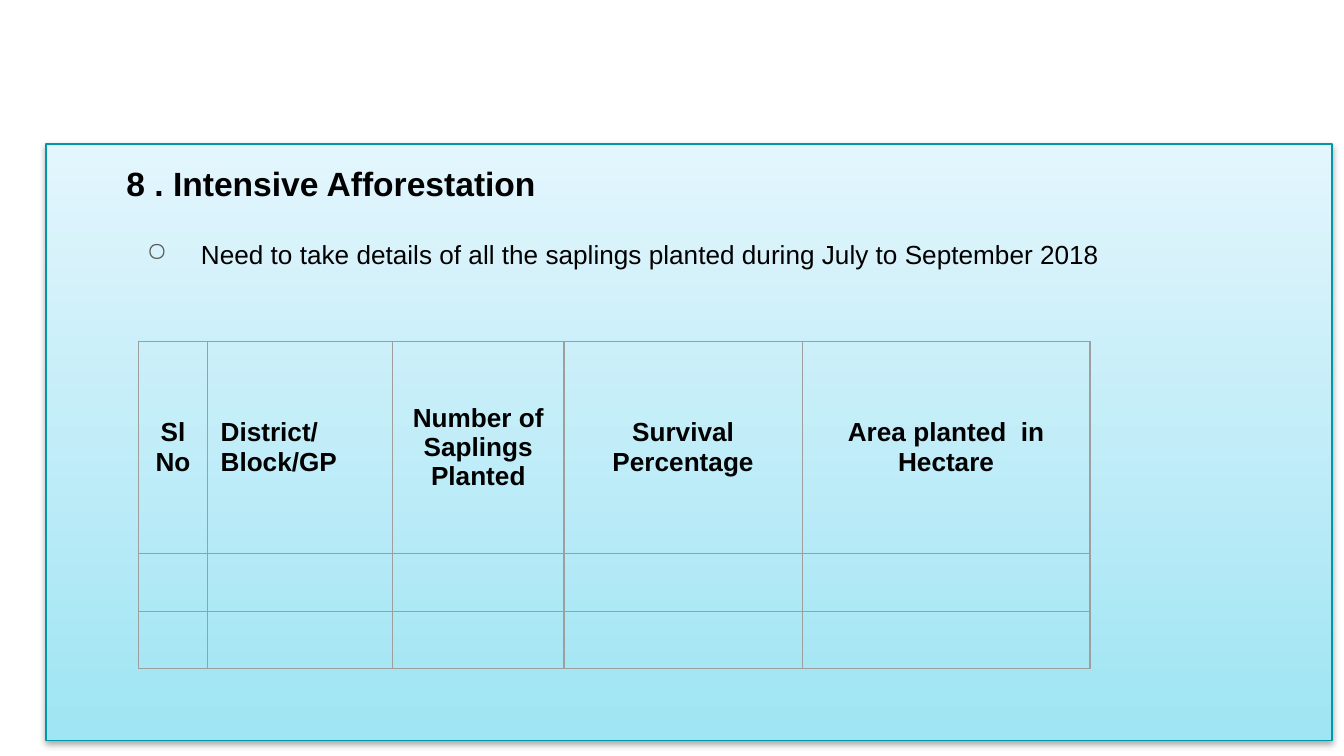
from lxml.etree import SubElement
from pptx import Presentation
from pptx.dml.color import RGBColor
from pptx.enum.shapes import MSO_SHAPE
from pptx.enum.text import MSO_ANCHOR, PP_ALIGN
from pptx.oxml import parse_xml
from pptx.oxml.ns import nsdecls, qn
from pptx.util import Cm, Pt

# Content
TITLE = "8 . Intensive Afforestation"
BULLET = " Need to take details of all the saplings planted during July to September 2018"
COLUMNS = [  # heading, width in cm, alignment
    ("Sl No", 1.3, PP_ALIGN.CENTER),
    ("District/Block/GP", 3.5, PP_ALIGN.LEFT),
    ("Number of Saplings Planted", 3.24, PP_ALIGN.CENTER),
    ("Survival Percentage", 4.5, PP_ALIGN.CENTER),
    ("Area planted  in Hectare", 5.44, PP_ALIGN.CENTER),
]
ROW_HEIGHTS = [4.02, 1.09, 1.07]
MARGIN = Cm(0.25)


def color(value):
    return RGBColor.from_string(value)


def set_font(paragraph, size, bold):
    font = paragraph.font
    font.name, font.size, font.bold = "Arial", Pt(size), bold
    font.color.rgb = color("000000")


def set_margins(target):
    target.margin_left = target.margin_right = MARGIN
    target.margin_top = target.margin_bottom = MARGIN


def set_borders(cell, value, width):
    properties = cell._tc.get_or_add_tcPr()
    for side in ("lnL", "lnR", "lnT", "lnB"):
        line = SubElement(properties, qn(f"a:{side}"), w=str(Pt(width)))
        fill = SubElement(line, qn("a:solidFill"))
        SubElement(fill, qn("a:srgbClr"), val=value)


presentation = Presentation()
presentation.slide_width, presentation.slide_height = Cm(25.4), Cm(14.29)
slide = presentation.slides.add_slide(presentation.slide_layouts[6])

# Gradient panel with a soft shadow
panel = slide.shapes.add_shape(MSO_SHAPE.RECTANGLE, Cm(0.87), Cm(2.72), Cm(24.31), Cm(11.28))
panel.fill.gradient()
panel.fill.gradient_angle = 270
for stop, value, position in zip(panel.fill.gradient_stops, ("E3F5FD", "9FE5F3"), (0, 1)):
    stop.color.rgb = color(value)
    stop.position = position
panel.line.color.rgb = color("0097A7")
panel.line.width = Pt(1)
panel.shadow.inherit = False
panel._element.spPr.find(qn("a:effectLst")).append(parse_xml(
    f'<a:outerShdw {nsdecls("a")} blurRad="40000" dist="23000" dir="5400000" rotWithShape="0">'
    '<a:srgbClr val="000000"><a:alpha val="35000"/></a:srgbClr></a:outerShdw>'))

# Title and bullet inside the panel
frame = panel.text_frame
frame.word_wrap = True
frame.vertical_anchor = MSO_ANCHOR.TOP
set_margins(frame)
title, bullet = frame.paragraphs[0], frame.add_paragraph()
for paragraph, text, size, bold, left, indent in (
    (title, TITLE, 18, True, 1.27, 0),
    (bullet, BULLET, 14, False, 2.54, -0.89),
):
    paragraph.text = text
    paragraph.alignment = PP_ALIGN.LEFT
    paragraph.line_spacing = 1.15
    set_font(paragraph, size, bold)
    properties = paragraph._p.get_or_add_pPr()
    properties.set("marL", str(Cm(left)))
    properties.set("indent", str(Cm(indent)))
bullet.level = 1
bullet.space_before = Pt(16)
properties = bullet._p.get_or_add_pPr()
marker = parse_xml(f'<a:buChar {nsdecls("a")} char="○"/>')
marker_color = parse_xml(f'<a:buClr {nsdecls("a")}><a:srgbClr val="595959"/></a:buClr>')
default_font = properties.find(qn("a:defRPr"))
default_font.addprevious(marker_color)
default_font.addprevious(marker)

# Table
table = slide.shapes.add_table(
    len(ROW_HEIGHTS), len(COLUMNS), Cm(2.62), Cm(6.45),
    Cm(sum(width for _, width, _ in COLUMNS)), Cm(sum(ROW_HEIGHTS))).table
table.first_row = table.horz_banding = False
for row, height in zip(table.rows, ROW_HEIGHTS):
    row.height = Cm(height)
for index, (heading, width, alignment) in enumerate(COLUMNS):
    table.columns[index].width = Cm(width)
    for row_index in range(len(ROW_HEIGHTS)):
        cell = table.cell(row_index, index)
        set_margins(cell)
        cell.vertical_anchor = MSO_ANCHOR.MIDDLE
        set_borders(cell, "9E9E9E", 0.75)
        cell.fill.background()
        paragraph = cell.text_frame.paragraphs[0]
        if row_index == 0:
            paragraph.text = heading
        paragraph.alignment = alignment
        set_font(paragraph, 14, True)

presentation.save("out.pptx")
